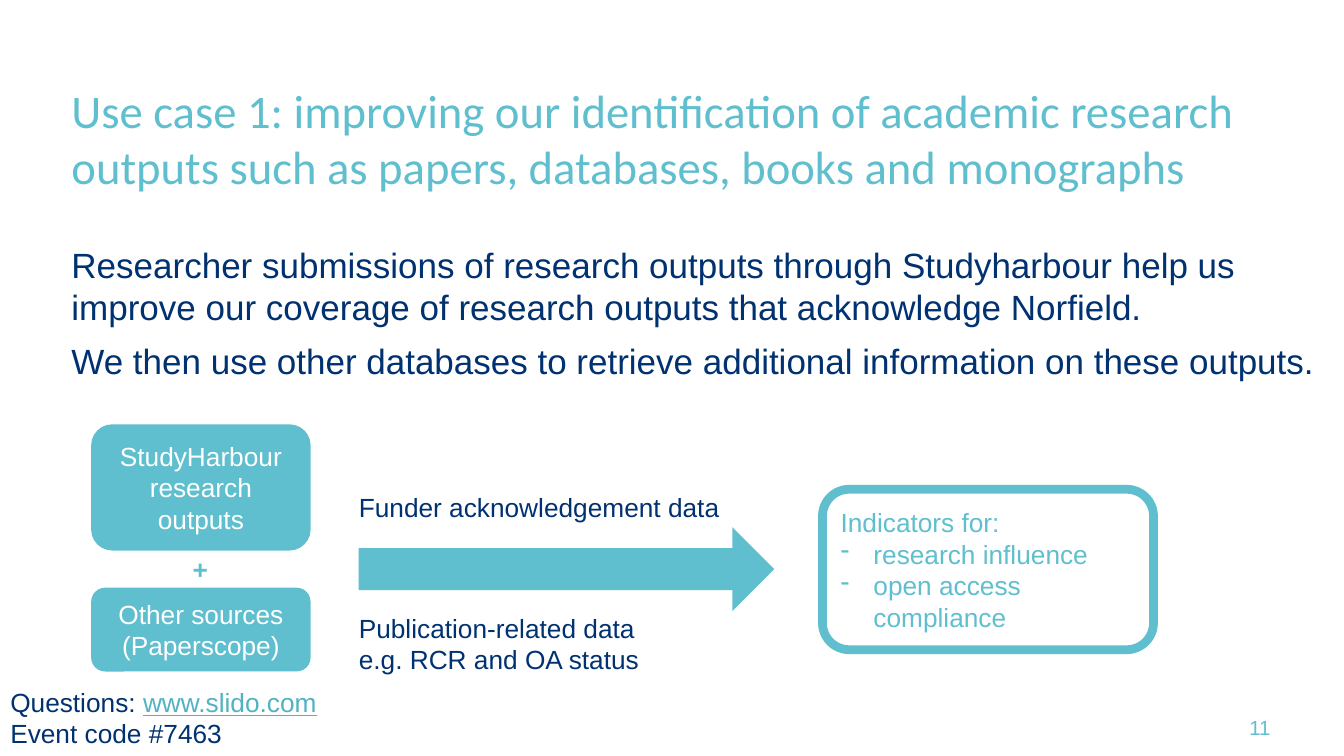
from lxml import etree
from pptx import Presentation
from pptx.dml.color import RGBColor
from pptx.enum import shapes, text
from pptx.oxml.ns import qn
from pptx.util import Pt

COLORS = {"teal": "60BFCE", "navy": "003170", "white": "FFFFFF", "link": "51B2C3"}
ALIGN = text.PP_ALIGN
ANCHOR = text.MSO_ANCHOR
SHAPE = shapes.MSO_SHAPE


def rgb(name):
    return RGBColor.from_string(COLORS[name])


def add_bullet(p, char, indent):
    pPr = p._p.get_or_add_pPr()
    pPr.set("marL", str(Pt(indent)))
    pPr.set("indent", str(-Pt(indent)))
    etree.SubElement(pPr, qn("a:buChar")).set("char", char)


def write(tf, paragraphs, size=18, color="navy", font="Arial", bold=False,
          align=ALIGN.LEFT, anchor=ANCHOR.TOP, inset=None, wrap=True, gap=0, bullets_from=None):
    """Each paragraph is a string or a list of (text, run format) pairs."""
    tf.word_wrap = wrap
    tf.vertical_anchor = anchor
    if inset is not None:
        tf.margin_left = tf.margin_right = tf.margin_top = tf.margin_bottom = Pt(inset)
    for i, content in enumerate(paragraphs):
        p = tf.add_paragraph() if i else tf.paragraphs[0]
        p.alignment = align
        if i and gap:
            p.space_before = Pt(gap)
        if bullets_from is not None and i >= bullets_from:
            add_bullet(p, "-", 22.5)
        runs = [(content, {})] if isinstance(content, str) else content
        for words, fmt in runs:
            r = p.add_run()
            r.text = words
            r.font.name, r.font.size, r.font.bold = font, Pt(size), bold
            r.font.color.rgb = rgb(fmt.get("color", color))
            if fmt.get("underline"):
                r.font.underline = True


def add_text(s, box, paragraphs, **fmt):
    tb = s.shapes.add_textbox(*map(Pt, box))
    write(tb.text_frame, paragraphs, **fmt)


def add_block(s, kind, box, paragraphs=(), fill=None, line=None, **fmt):
    sp = s.shapes.add_shape(kind, *map(Pt, box))
    sp.shadow.inherit = False
    if fill:
        sp.fill.solid()
        sp.fill.fore_color.rgb = rgb(fill)
    else:
        sp.fill.background()
    if line:
        sp.line.color.rgb = rgb(line)
        sp.line.width = Pt(6)
    else:
        sp.line.fill.background()
    write(sp.text_frame, paragraphs, anchor=ANCHOR.MIDDLE, **fmt)


def main():
    prs = Presentation()
    prs.slide_width, prs.slide_height = Pt(921.6), Pt(518.4)
    s = prs.slides.add_slide(prs.slide_layouts[6])

    # Title and body
    add_text(s, (49, 51, 823, 86.5),
             ["Use case 1: improving our identification of academic research "
              "outputs such as papers, databases, books and monographs"],
             size=32, color="teal", font="Calibri", anchor=ANCHOR.MIDDLE, inset=0)
    add_text(s, (49, 167, 858, 100),
             ["Researcher submissions of research outputs through Studyharbour help us "
              "improve our coverage of research outputs that acknowledge Norfield.",
              "We then use other databases to retrieve additional information on these outputs."],
             size=24, inset=0, gap=8)

    # Data sources
    for top, height, label in ((291, 86.5, "StudyHarbour research outputs"),
                               (403, 57.5, "Other sources (Paperscope)")):
        add_block(s, SHAPE.ROUNDED_RECTANGLE, (62.5, top, 150.5, height), [label],
                  fill="teal", color="white", align=ALIGN.CENTER)
    add_text(s, (125, 376, 25, 29), ["+"], color="teal", bold=True, wrap=False)

    # Arrow with its labels
    add_block(s, SHAPE.RIGHT_ARROW, (246, 361.5, 285, 57.5), fill="teal")
    add_text(s, (239, 333.5, 264, 29), ["Funder acknowledgement data"], wrap=False)
    add_text(s, (239, 416, 210, 51),
             ["Publication-related data", "e.g. RCR and OA status"], wrap=False)

    # Resulting indicators
    add_block(s, SHAPE.ROUNDED_RECTANGLE, (564, 335.5, 227, 110),
              ["Indicators for:", "research influence", "open access compliance"],
              line="teal", color="teal", bullets_from=1)

    # Footer
    add_text(s, (0, 467, 402, 51),
             [[("Questions: ", {}), ("www.slido.com", {"color": "link", "underline": True})],
              "Event code #7463"])
    add_text(s, (844.5, 485.5, 39, 27), ["11"], size=14, color="teal",
             align=ALIGN.CENTER, anchor=ANCHOR.MIDDLE)

    prs.save("out.pptx")


if __name__ == "__main__":
    main()
